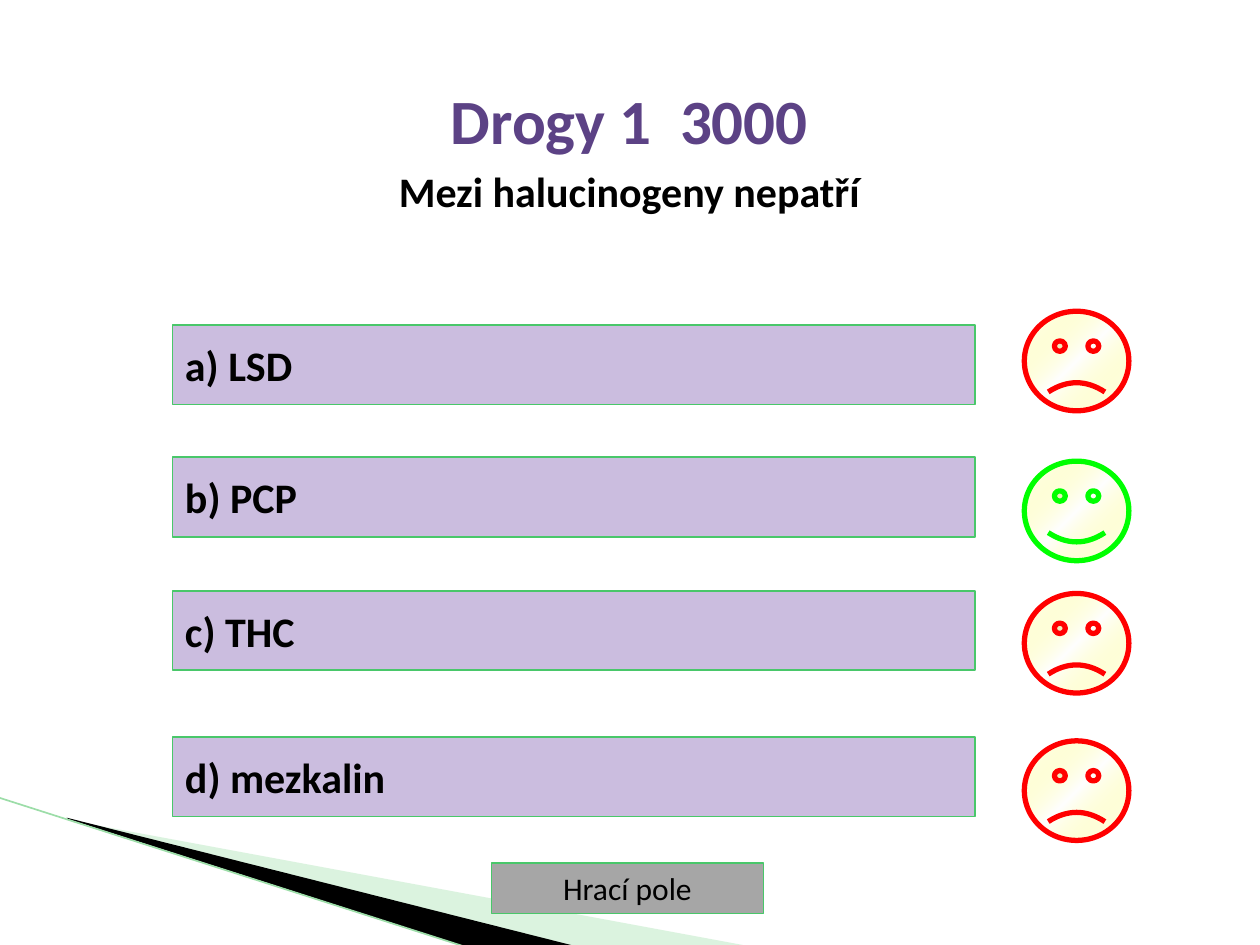
from lxml.etree import SubElement
from pptx import Presentation
from pptx.dml.color import RGBColor
from pptx.enum.shapes import MSO_CONNECTOR, MSO_SHAPE
from pptx.enum.text import MSO_ANCHOR, PP_ALIGN
from pptx.oxml.ns import qn
from pptx.util import Pt

SCALE = 9144
FONT = "Calibri"
BLACK = RGBColor(0x00, 0x00, 0x00)
WHITE = RGBColor(0xFF, 0xFF, 0xFF)
PURPLE = RGBColor(0x5C, 0x42, 0x85)
LILAC = RGBColor(0xCB, 0xBD, 0xDF)
GRAY = RGBColor(0xA6, 0xA6, 0xA6)
GREEN = RGBColor(0x49, 0xC7, 0x6A)
MINT = RGBColor(0xA5, 0xE1, 0xAF)
LIGHT_GREEN = RGBColor(0x9C, 0xDD, 0xA8)
YELLOW = RGBColor(0xFF, 0xFF, 0x66)
RIGHT_COLOR = RGBColor(0x00, 0xFF, 0x00)
WRONG_COLOR = RGBColor(0xFF, 0x00, 0x00)
SMILE = 0.047

ANSWERS = [
    ("a) LSD", 258, 247, False),
    ("b) PCP", 363, 366, True),
    ("c) THC", 469, 471, False),
    ("d) mezkalin", 585, 588, False),
]


def px(*lengths):
    return [length * SCALE for length in lengths]


def write(paragraph, text, size=24, color=BLACK, bold=True, align=PP_ALIGN.LEFT, before=0):
    paragraph.alignment = align
    paragraph.space_before = Pt(before)
    run = paragraph.add_run()
    run.text = text
    run.font.name = FONT
    run.font.size = Pt(size)
    run.font.bold = bold
    run.font.color.rgb = color


def set_alpha(color_element, percent):
    SubElement(color_element, qn("a:alpha")).set("val", str(percent * 1000))


class QuizSlide:
    """Draws the parts of a quiz slide in one style."""

    def __init__(self, presentation):
        self.slide = presentation.slides.add_slide(presentation.slide_layouts[6])
        self.shapes = self.slide.shapes

    def wedge(self, points, color, opacity=100):
        builder = self.shapes.build_freeform(*points[0], scale=SCALE)
        builder.add_line_segments(points[1:], close=True)
        shape = builder.convert_to_shape()
        shape.shadow.inherit = False
        shape.fill.solid()
        shape.fill.fore_color.rgb = color
        shape.line.fill.background()
        if opacity < 100:
            set_alpha(shape.element.spPr.find(qn("a:solidFill"))[0], opacity)

    def line(self, start, end, color, width):
        connector = self.shapes.add_connector(MSO_CONNECTOR.STRAIGHT, *px(*start, *end))
        connector.line.color.rgb = color
        connector.line.width = Pt(width)
        SubElement(connector.element.spPr, qn("a:effectLst"))

    def heading(self, box, title, question):
        frame = self.shapes.add_textbox(*px(*box)).text_frame
        frame.word_wrap = True
        write(frame.paragraphs[0], title, size=36, color=PURPLE, align=PP_ALIGN.CENTER)
        write(frame.add_paragraph(), question, align=PP_ALIGN.CENTER, before=4.8)

    def button(self, box, text, fill, line_width, **text_format):
        shape = self.shapes.add_shape(MSO_SHAPE.ACTION_BUTTON_CUSTOM, *px(*box))
        shape.shadow.inherit = False
        shape.fill.solid()
        shape.fill.fore_color.rgb = fill
        shape.line.color.rgb = GREEN
        shape.line.width = Pt(line_width)
        frame = shape.text_frame
        frame.word_wrap = False
        frame.vertical_anchor = MSO_ANCHOR.MIDDLE
        write(frame.paragraphs[0], text, **text_format)

    def face(self, box, correct):
        shape = self.shapes.add_shape(MSO_SHAPE.SMILEY_FACE, *px(*box))
        shape.shadow.inherit = False
        shape.adjustments[0] = SMILE if correct else -SMILE
        shape.line.color.rgb = RIGHT_COLOR if correct else WRONG_COLOR
        shape.line.width = Pt(3)
        shape.fill.gradient()
        shape.fill.gradient_angle = 315
        stops = shape.element.spPr.find(qn("a:gradFill")).find(qn("a:gsLst"))
        for stop in list(stops):
            stops.remove(stop)
        for position, color in ((0, WHITE), (50, YELLOW), (100, WHITE)):
            stop = SubElement(stops, qn("a:gs"), pos=str(position * 1000))
            color_element = SubElement(stop, qn("a:srgbClr"), val=str(color))
            if color == YELLOW:
                set_alpha(color_element, 0)


def main():
    presentation = Presentation()
    presentation.slide_width, presentation.slide_height = px(1000, 750)
    quiz = QuizSlide(presentation)
    quiz.wedge([(55, 651), (595, 751), (456, 751), (55, 650)], MINT, opacity=40)
    quiz.wedge([(53, 649), (457, 751), (372, 752), (54, 650)], BLACK)
    quiz.line((-1, 633), (371, 752), LIGHT_GREEN, 0.95)
    quiz.button((390, 685, 216, 40), "Hrací pole", GRAY, 0.75,
                size=18, bold=False, align=PP_ALIGN.CENTER)
    quiz.heading((39, 60, 921, 75), "Drogy 1  3000", "Mezi halucinogeny nepatří")
    for text, bar_top, face_top, correct in ANSWERS:
        quiz.button((137, bar_top, 637, 63), text, LILAC, 1)
        quiz.face((813, face_top, 83, 79), correct)
    presentation.save("out.pptx")


if __name__ == "__main__":
    main()
